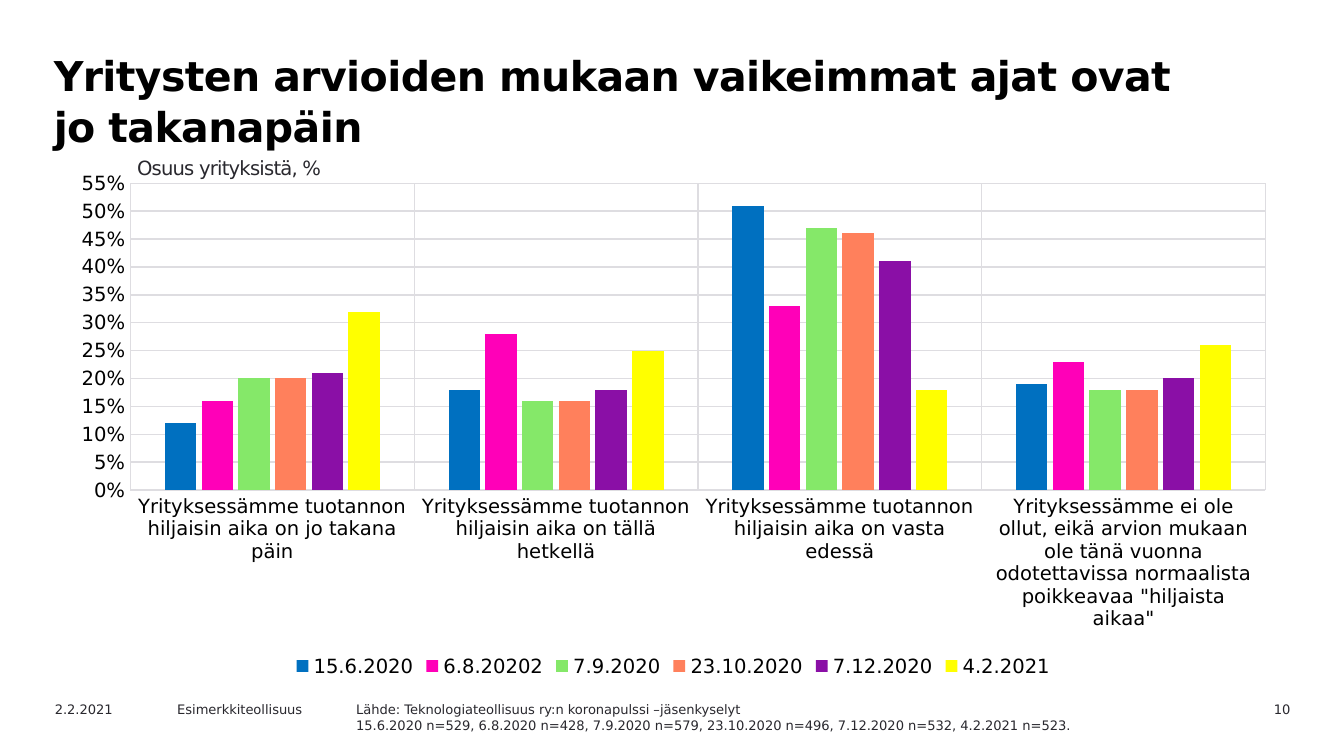
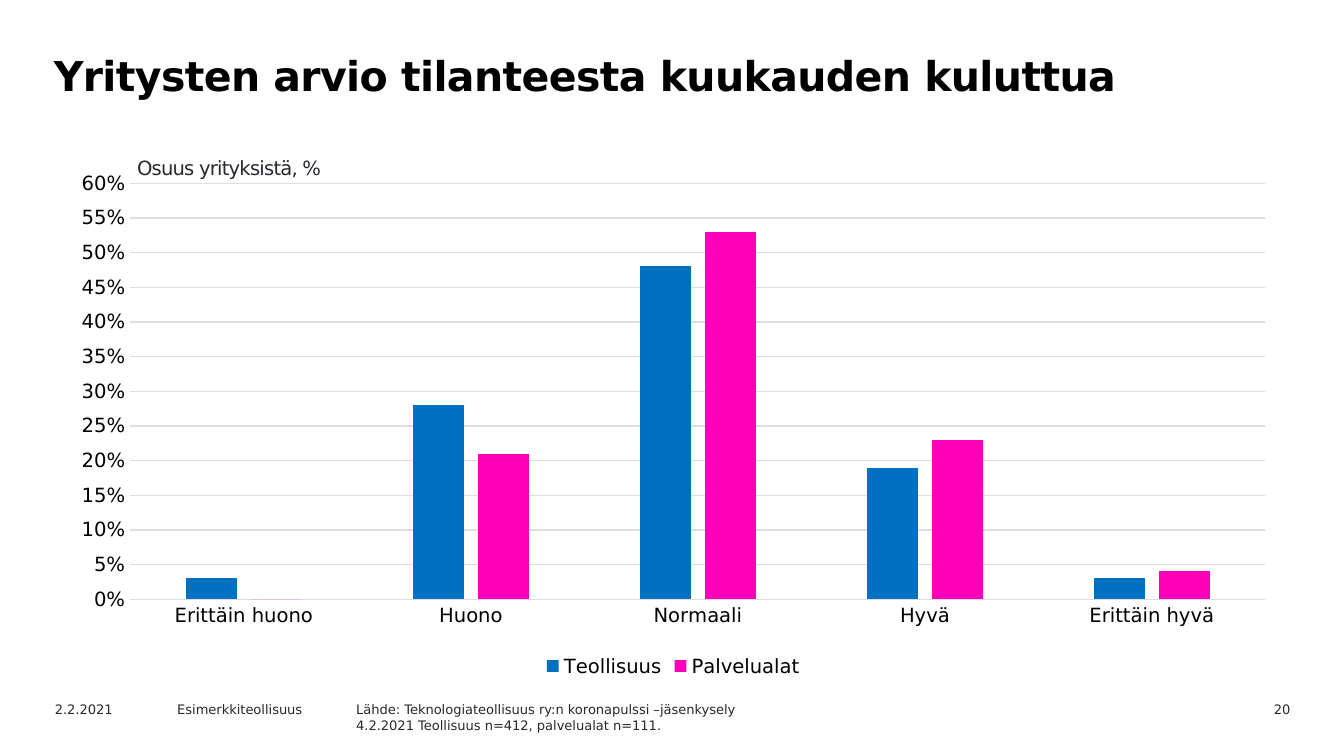
import lxml.etree
import pptx
import pptx.chart.data
import pptx.dml.color
import pptx.enum.chart
import pptx.enum.text
import pptx.oxml.ns
import pptx.util

FONT = "DejaVu Sans"
BLACK, INK, GRID = "000000", "29282E", "DEDDE1"
BLUE, PINK, GREEN, CORAL, PURPLE, YELLOW = (
    "0070C0", "FF00B8", "85E869", "FF805C", "8A0FA6", "FFFF00")
WIDTH, HEIGHT = pptx.util.Inches(10), pptx.util.Inches(5.625)

# Left, top, width, height as percentages of the slide
TITLE_AREA = (2.8, 5.5, 87.4, 12.6)
CHART_AREA = (4.2, 21.5, 91.8, 68.8)
UNIT_AREA = (9.8, 19.9, 33.9, 4.6)
FOOTER_TOP, FOOTER_ROW = 91.9, 3.2
DATE_AREA = (3.1, FOOTER_TOP, 10, FOOTER_ROW)
OWNER_AREA = (12.2, FOOTER_TOP, 14.2, FOOTER_ROW)
SOURCE_AREA = (25.5, FOOTER_TOP, 60.7, 8)
NUMBER_AREA = (87.6, FOOTER_TOP, 9.4, FOOTER_ROW)


def color(value):
    return pptx.dml.color.RGBColor.from_string(value)


def place(area):
    """Turn percentages of the slide into lengths."""
    return [int(share * side / 100)
            for share, side in zip(area, (WIDTH, HEIGHT, WIDTH, HEIGHT))]


def style_font(font, size, value, bold=False):
    font.name = FONT
    font.size = pptx.util.Pt(size)
    font.bold = bold
    font.color.rgb = color(value)


def write(shape, lines, size, value=INK, bold=False, align="LEFT", tracking=0, leading=None):
    frame = shape.text_frame
    frame.word_wrap = True
    frame.auto_size = pptx.enum.text.MSO_AUTO_SIZE.NONE
    frame.vertical_anchor = pptx.enum.text.MSO_ANCHOR.TOP
    for index, line in enumerate(lines):
        paragraph = frame.add_paragraph() if index else frame.paragraphs[0]
        paragraph.alignment = getattr(pptx.enum.text.PP_ALIGN, align)
        paragraph.space_before = pptx.util.Pt(0)
        if leading:
            paragraph.line_spacing = pptx.util.Pt(leading)
        run = paragraph.add_run()
        run.text = line
        style_font(run.font, size, value, bold)
        if tracking:
            run._r.get_or_add_rPr().set("spc", str(int(tracking * 100)))
    return frame


def add_text(slide, area, line, size, **options):
    return write(slide.shapes.add_textbox(*place(area)), [line], size, **options)


def fill_placeholder(shape, area, lines, size, **options):
    shape.left, shape.top, shape.width, shape.height = place(area)
    frame = write(shape, lines, size, **options)
    for paragraph in frame.paragraphs:
        properties = paragraph._p.get_or_add_pPr()
        properties.set("marL", "0")
        properties.set("indent", "0")
        lxml.etree.SubElement(properties, pptx.oxml.ns.qn("a:buNone"))
    return frame


def set_plot_area(chart, height):
    """Fix the inner plot area as shares of the chart."""
    qn = pptx.oxml.ns.qn
    plot_area = chart._chartSpace.chart.plotArea
    for old in plot_area.findall(qn("c:layout")):
        plot_area.remove(old)
    layout = lxml.etree.Element(qn("c:layout"))
    manual = lxml.etree.SubElement(layout, qn("c:manualLayout"))
    settings = {"layoutTarget": "inner", "xMode": "edge", "yMode": "edge",
                "x": 0.06, "y": 0.04, "w": 0.92, "h": height}
    for name, value in settings.items():
        lxml.etree.SubElement(manual, qn("c:" + name)).set("val", str(value))
    plot_area.insert(0, layout)


def style_line(line):
    line.color.rgb = color(GRID)
    line.width = pptx.util.Pt(0.75)


def style_axis(axis, gridlines):
    tick_none = pptx.enum.chart.XL_TICK_MARK.NONE
    axis.major_tick_mark = axis.minor_tick_mark = tick_none
    style_font(axis.tick_labels.font, 10.5, BLACK)
    axis.has_major_gridlines = gridlines
    if gridlines:
        style_line(axis.major_gridlines.format.line)


def add_column_chart(slide, categories, series, overlap, maximum, plot_height, dividers=False):
    data = pptx.chart.data.CategoryChartData(number_format="0%")
    data.categories = categories
    for name, _, values in series:
        data.add_series(name, values)
    chart = slide.shapes.add_chart(
        pptx.enum.chart.XL_CHART_TYPE.COLUMN_CLUSTERED, *place(CHART_AREA), data).chart
    style_font(chart.font, 10, INK)
    chart.has_title = False
    chart.has_legend = True
    chart.legend.position = pptx.enum.chart.XL_LEGEND_POSITION.BOTTOM
    chart.legend.include_in_layout = False
    style_font(chart.legend.font, 10.5, BLACK)

    plot = chart.plots[0]
    plot.gap_width, plot.overlap = 219, overlap
    plot.vary_by_categories = False
    for column, (_, value, _) in zip(plot.series, series):
        column.format.fill.solid()
        column.format.fill.fore_color.rgb = color(value)
        column.invert_if_negative = False

    style_axis(chart.category_axis, dividers)
    style_line(chart.category_axis.format.line)
    value_axis = chart.value_axis
    style_axis(value_axis, True)
    value_axis.format.line.fill.background()
    value_axis.minimum_scale, value_axis.maximum_scale = 0, maximum
    value_axis.major_unit = 0.05
    value_axis.tick_labels.number_format = "0%"
    value_axis.tick_labels.number_format_is_linked = False
    set_plot_area(chart, plot_height)


def add_survey_slide(presentation, title, number, source, **chart):
    slide = presentation.slides.add_slide(presentation.slide_layouts[1])
    heading = fill_placeholder(slide.shapes.title, TITLE_AREA, [title], 22,
                               value=BLACK, bold=True, tracking=-0.3, leading=27)
    heading.margin_left = pptx.util.Inches(0.12)
    heading.margin_top = pptx.util.Inches(0.06)
    fill_placeholder(slide.placeholders[1], SOURCE_AREA, source, 7)
    add_text(slide, DATE_AREA, "2.2.2021", 7)
    add_text(slide, OWNER_AREA, "Esimerkkiteollisuus", 7)
    add_text(slide, NUMBER_AREA, str(number), 7, align="RIGHT")
    add_column_chart(slide, **chart)
    unit = add_text(slide, UNIT_AREA, "Osuus yrityksistä, %", 10.5, tracking=-0.4)
    unit.margin_left = unit.margin_right = pptx.util.Inches(0.04)
    unit.margin_top = unit.margin_bottom = pptx.util.Inches(0.04)


def main():
    presentation = pptx.Presentation()
    presentation.slide_width, presentation.slide_height = WIDTH, HEIGHT

    add_survey_slide(
        presentation, "Yritysten arvioiden mukaan vaikeimmat ajat ovat jo takanapäin", 10,
        ["Lähde: Teknologiateollisuus ry:n koronapulssi –jäsenkyselyt",
         "15.6.2020 n=529, 6.8.2020 n=428, 7.9.2020 n=579, 23.10.2020 n=496, "
         "7.12.2020 n=532, 4.2.2021 n=523."],
        categories=[
            "Yrityksessämme tuotannon hiljaisin aika on jo takana päin",
            "Yrityksessämme tuotannon hiljaisin aika on tällä hetkellä",
            "Yrityksessämme tuotannon hiljaisin aika on vasta edessä",
            "Yrityksessämme ei ole ollut, eikä arvion mukaan ole tänä vuonna "
            "odotettavissa normaalista poikkeavaa \"hiljaista aikaa\""],
        series=[
            ("15.6.2020", BLUE, (0.12, 0.18, 0.51, 0.19)),
            ("6.8.20202", PINK, (0.16, 0.28, 0.33, 0.23)),
            ("7.9.2020", GREEN, (0.2, 0.16, 0.47, 0.18)),
            ("23.10.2020", CORAL, (0.2, 0.16, 0.46, 0.18)),
            ("7.12.2020", PURPLE, (0.21, 0.18, 0.41, 0.2)),
            ("4.2.2021", YELLOW, (0.32, 0.25, 0.18, 0.26))],
        overlap=-17, maximum=0.55, plot_height=0.59, dividers=True)

    add_survey_slide(
        presentation, "Yritysten arvio tilanteesta kuukauden kuluttua", 20,
        ["Lähde: Teknologiateollisuus ry:n koronapulssi –jäsenkysely",
         "4.2.2021 Teollisuus n=412, palvelualat n=111."],
        categories=["Erittäin huono", "Huono", "Normaali", "Hyvä", "Erittäin hyvä"],
        series=[
            ("Teollisuus", BLUE, (0.03, 0.28, 0.48, 0.19, 0.03)),
            ("Palvelualat", PINK, (0, 0.21, 0.53, 0.23, 0.04))],
        overlap=-27, maximum=0.6, plot_height=0.8)

    presentation.save("out.pptx")


if __name__ == "__main__":
    main()
